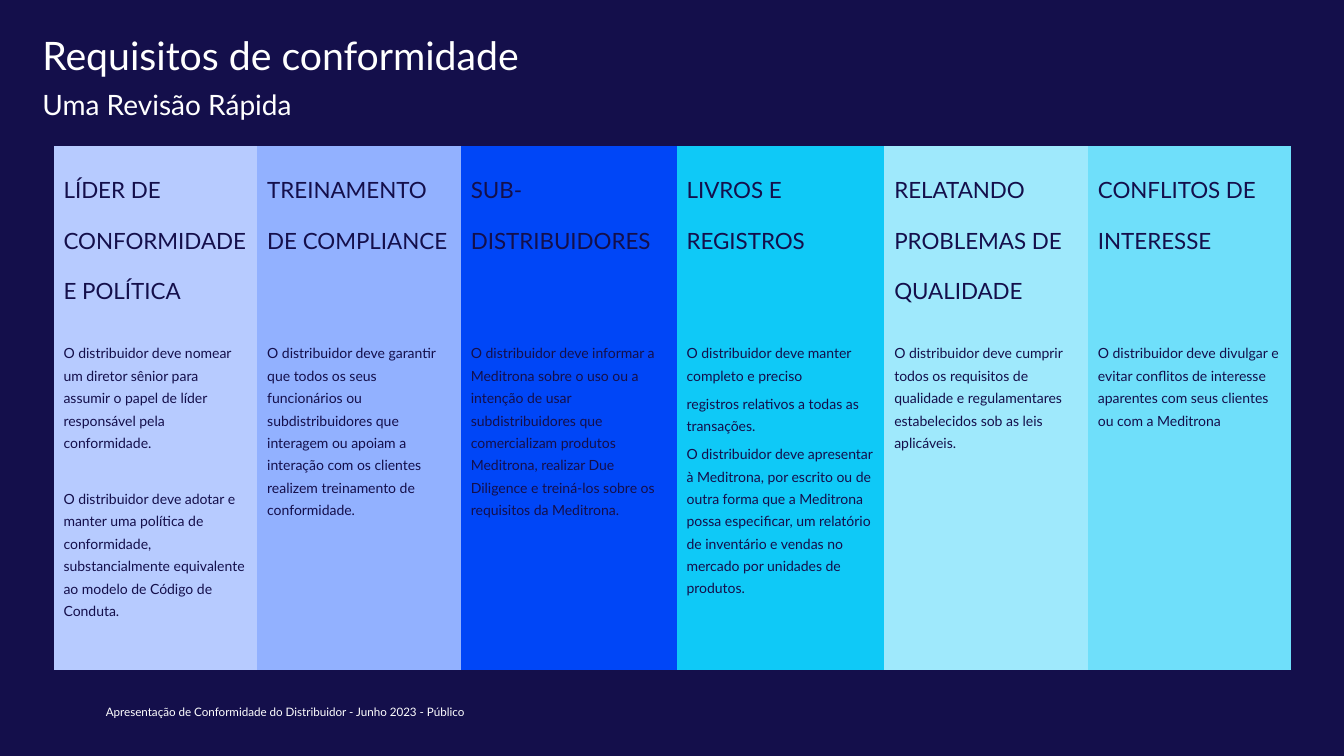
from pptx import Presentation
from pptx.dml.color import RGBColor
from pptx.enum.text import MSO_ANCHOR as Anchor, MSO_AUTO_SIZE as AutoSize, PP_ALIGN as Align
from pptx.util import Inches, Pt

NAVY, WHITE = "140F4B", "FFFFFF"
NO_GRID_STYLE = "{2D5ABB26-0587-4C30-8999-92F81FD0307C}"
SLIDE_WIDTH, SLIDE_HEIGHT = Inches(13.33), Inches(7.5)
COLUMN_WEIGHTS = [2.02, 2.02, 2.14, 2.06, 2.02, 2.02]
ROW_WEIGHTS = [1.85, 3.35]

REQUIREMENTS = [
    ("B7CBFF", "LÍDER DE CONFORMIDADE E POLÍTICA", [
        "O distribuidor deve nomear um diretor sênior para assumir o papel de líder "
        "responsável pela conformidade.",
        "O distribuidor deve adotar e manter uma política de conformidade, "
        "substancialmente equivalente ao modelo de Código de Conduta."], 20),
    ("92B1FF", "TREINAMENTO DE COMPLIANCE", [
        "O distribuidor deve garantir que todos os seus funcionários ou subdistribuidores "
        "que interagem ou apoiam a interação com os clientes realizem treinamento de "
        "conformidade."], 0),
    ("0046F7", "SUB-DISTRIBUIDORES", [
        "O distribuidor deve informar a Meditrona sobre o uso ou a intenção de usar "
        "subdistribuidores que comercializam produtos Meditrona, realizar Due Diligence "
        "e treiná-los sobre os requisitos da Meditrona."], 0),
    ("0FC9F7", "LIVROS E REGISTROS", [
        "O distribuidor deve manter completo e preciso",
        "registros relativos a todas as transações.",
        "O distribuidor deve apresentar à Meditrona, por escrito ou de outra forma que a "
        "Meditrona possa especificar, um relatório de inventário e vendas no mercado por "
        "unidades de produtos."], 0),
    ("9FE9FC", "RELATANDO PROBLEMAS DE QUALIDADE", [
        "O distribuidor deve cumprir todos os requisitos de qualidade e regulamentares "
        "estabelecidos sob as leis aplicáveis."], 0),
    ("6FDFFA", "CONFLITOS DE INTERESSE", [
        "O distribuidor deve divulgar e evitar conflitos de interesse aparentes com seus "
        "clientes ou com a Meditrona"], 0),
]


def color(hex_code):
    return RGBColor.from_string(hex_code)


def percent_box(left, top, width, height):
    return (round(SLIDE_WIDTH * left / 100), round(SLIDE_HEIGHT * top / 100),
            round(SLIDE_WIDTH * width / 100), round(SLIDE_HEIGHT * height / 100))


def write(frame, paragraphs, size, ink, spacing=None, after=0, gap=0):
    frame.word_wrap = True
    for index, text in enumerate(paragraphs):
        paragraph = frame.add_paragraph() if index else frame.paragraphs[0]
        paragraph.alignment = Align.LEFT
        paragraph.space_before = Pt(gap if index else 0)
        paragraph.space_after = Pt(after)
        if spacing:
            paragraph.line_spacing = spacing
        run = paragraph.add_run()
        run.text = text
        run.font.name = "Lato"
        run.font.size = Pt(size)
        run.font.color.rgb = color(ink)


def place_text(shape, box, text, anchor=Anchor.TOP, **style):
    shape.left, shape.top, shape.width, shape.height = box
    frame = shape.text_frame
    frame.auto_size = AutoSize.NONE
    frame.vertical_anchor = anchor
    frame.margin_left = frame.margin_right = frame.margin_top = frame.margin_bottom = 0
    write(frame, [text], ink=WHITE, **style)


def add_heading(slide, box):
    left, top, width, height = box
    place_text(slide.shapes.title, (left, top, width, round(height * 0.47)),
               "Requisitos de conformidade", size=28, spacing=0.85)
    subtitle_box = left, top + round(height * 0.55), width, round(height * 0.45)
    place_text(slide.shapes.add_textbox(*subtitle_box), subtitle_box,
               "Uma Revisão Rápida", size=20)


def fill_cell(cell, fill, paragraphs, bottom, **style):
    cell.fill.solid()
    cell.fill.fore_color.rgb = color(fill)
    cell.margin_left = cell.margin_right = Inches(0.1)
    cell.margin_top, cell.margin_bottom = Inches(0.07), Inches(bottom)
    write(cell.text_frame, paragraphs, ink=NAVY, **style)


def add_requirements(slide, box):
    left, top, width, height = box
    table = slide.shapes.add_table(len(ROW_WEIGHTS), len(REQUIREMENTS), *box).table
    table.first_row = table.horz_banding = False
    table._tbl.tblPr[0].text = NO_GRID_STYLE
    for column, weight in zip(table.columns, COLUMN_WEIGHTS):
        column.width = round(width * weight / sum(COLUMN_WEIGHTS))
    for row, weight in zip(table.rows, ROW_WEIGHTS):
        row.height = round(height * weight / sum(ROW_WEIGHTS))
    for index, (fill, topic, duties, gap) in enumerate(REQUIREMENTS):
        fill_cell(table.cell(0, index), fill, [topic], 0.07, size=16, spacing=Pt(36))
        fill_cell(table.cell(1, index), fill, duties, 0.03, size=10,
                  spacing=Pt(16), after=4, gap=gap)


def add_footer(slide, box):
    place_text(slide.shapes.add_textbox(*box), box,
               "Apresentação de Conformidade do Distribuidor - Junho 2023 - Público",
               anchor=Anchor.BOTTOM, size=8.3)


def main():
    presentation = Presentation()
    presentation.slide_width, presentation.slide_height = SLIDE_WIDTH, SLIDE_HEIGHT
    slide = presentation.slides.add_slide(presentation.slide_layouts[5])
    slide.background.fill.solid()
    slide.background.fill.fore_color.rgb = color(NAVY)
    add_heading(slide, percent_box(3.15, 5.07, 93.77, 11.87))
    add_requirements(slide, percent_box(3.98, 19.33, 92.12, 69.33))
    add_footer(slide, percent_box(7.88, 93.2, 71.94, 1.87))
    presentation.save("out.pptx")


if __name__ == "__main__":
    main()
